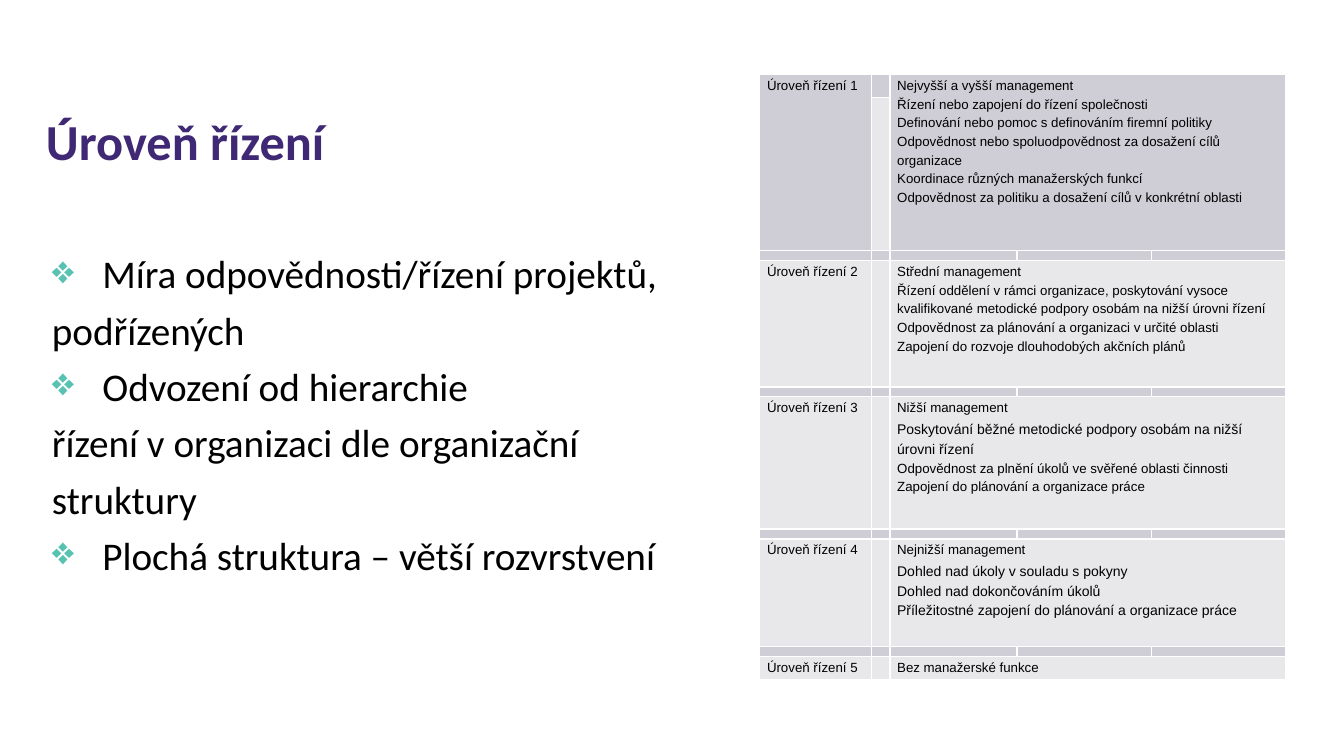
from dataclasses import dataclass

import pptx
import pptx.dml.color
import pptx.enum.text
import pptx.oxml.ns
import pptx.util
from lxml import etree
from pptx.util import Cm, Pt


@dataclass(frozen=True)
class Theme:
    heading_font: str = "Calibri"
    table_font: str = "Arial"
    title: str = "3F2874"
    text: str = "000000"
    bullet: str = "57C2B2"
    dark: str = "CFCDD6"
    light: str = "E8E8EB"
    border: str = "FFFFFF"
    title_size: float = 36
    body_size: float = 28
    cell_size: float = 9.5
    large_cell_size: float = 10
    empty_size: float = 1


@dataclass(frozen=True)
class Level:
    height: float
    lines: tuple
    large_lines: tuple = ()


THEME = Theme()
TITLE_BOX = (0.91, 0.84, 16, 4.65)
BODY_BOX = (0.91, 6.3, 32, 10.21)
TABLE_BOX = (19.15, 1.88, 13.26, 15.22)
COLUMNS = (2.82, 0.46, 3.2, 3.38, 3.4)
FIRST_ROW = 0.58
GAP_ROW = 0.25

BODY_LINES = (
    (True, "Míra odpovědnosti/řízení projektů,"),
    (False, "podřízených"),
    (True, "Odvození od hierarchie"),
    (False, "řízení v organizaci dle organizační"),
    (False, "struktury"),
    (True, "Plochá struktura – větší rozvrstvení"),
)

LEVELS = (
    Level(3.86, (
        "Nejvyšší a vyšší management",
        "Řízení nebo zapojení do řízení společnosti",
        "Definování nebo pomoc s definováním firemní politiky",
        "Odpovědnost nebo spoluodpovědnost za dosažení cílů organizace",
        "Koordinace různých manažerských funkcí",
        "Odpovědnost za politiku a dosažení cílů v konkrétní oblasti",
    )),
    Level(3.18, (
        "Střední management",
        "Řízení oddělení v rámci organizace, poskytování vysoce kvalifikované "
        "metodické podpory osobám na nižší úrovni řízení",
        "Odpovědnost za plánování a organizaci v určité oblasti",
        "Zapojení do rozvoje dlouhodobých akčních plánů",
    )),
    Level(3.33, (
        "Nižší management",
        "Poskytování běžné metodické podpory osobám na nižší úrovni řízení",
        "Odpovědnost za plnění úkolů ve svěřené oblasti činnosti",
        "Zapojení do plánování a organizace práce",
    ), (1,)),
    Level(2.72, (
        "Nejnižší management",
        "Dohled nad úkoly v souladu s pokyny",
        "Dohled nad dokončováním úkolů",
        "Příležitostné zapojení do plánování a organizace práce",
    ), (1, 2, 3)),
    Level(0.58, ("Bez manažerské funkce",)),
)


def add_element(parent, tag, **attributes):
    return etree.SubElement(parent, pptx.oxml.ns.qn(tag), attributes)


def style_para(para, font, size, color, bold=False):
    for span in para.runs:
        span.font.name = font
        span.font.size = Pt(size)
        span.font.bold = bold
        span.font.color.rgb = pptx.dml.color.RGBColor.from_string(color)


def add_text_frame(page, box):
    frame = page.shapes.add_textbox(*map(Cm, box)).text_frame
    frame.word_wrap = True
    return frame


def add_title(page, box):
    frame = add_text_frame(page, box)
    frame.vertical_anchor = pptx.enum.text.MSO_ANCHOR.MIDDLE
    frame.text = "Úroveň řízení"
    para = frame.paragraphs[0]
    para.line_spacing = 1.5
    style_para(para, THEME.heading_font, THEME.title_size, THEME.title, True)


def set_indent(para, bulleted):
    properties = para._p.get_or_add_pPr()
    properties.set("marL", str(Cm(1.42 if bulleted else 0.15)))
    properties.set("indent", str(Cm(-1.27 if bulleted else 0)))
    if bulleted:
        color = add_element(properties, "a:buClr")
        add_element(color, "a:srgbClr", val=THEME.bullet)
        add_element(properties, "a:buChar", char="❖")
    else:
        add_element(properties, "a:buNone")


def add_body(page, box):
    frame = add_text_frame(page, box)
    frame.text = "\n".join(text for _, text in BODY_LINES)
    for index, (bulleted, _) in enumerate(BODY_LINES):
        para = frame.paragraphs[index]
        set_indent(para, bulleted)
        para.line_spacing = 0.9
        if index:
            para.space_before = Pt(10)
        style_para(para, THEME.heading_font, THEME.body_size, THEME.text)


def style_cell(cell, fill):
    cell.margin_left = cell.margin_right = Cm(0.18)
    cell.margin_top = cell.margin_bottom = 0
    properties = cell._tc.get_or_add_tcPr()
    for side in ("a:lnL", "a:lnR", "a:lnT", "a:lnB"):
        line = add_element(properties, side, w=str(Pt(1)))
        add_element(add_element(line, "a:solidFill"), "a:srgbClr", val=THEME.border)
    cell.fill.solid()
    cell.fill.fore_color.rgb = pptx.dml.color.RGBColor.from_string(fill)
    add_element(cell.text_frame.paragraphs[0]._p, "a:endParaRPr",
                sz=str(int(THEME.empty_size * 100)))


def fill_cell(cell, lines, large_lines=()):
    cell.text_frame.text = "\n".join(lines)
    for index, para in enumerate(cell.text_frame.paragraphs):
        para.line_spacing = 1.25
        if large_lines and index == 0:
            para.space_after = Pt(2)
        size = THEME.large_cell_size if index in large_lines else THEME.cell_size
        style_para(para, THEME.table_font, size, THEME.text)


def add_levels_table(page, box):
    heights = [FIRST_ROW]
    for level in LEVELS:
        heights += [level.height, GAP_ROW]
    heights.pop()
    table = page.shapes.add_table(len(heights), len(COLUMNS), *map(Cm, box)).table
    table.first_row = table.horz_banding = False
    for column, width in zip(table.columns, COLUMNS):
        column.width = Cm(width)
    for index, height in enumerate(heights):
        table.rows[index].height = Cm(height)
        for column in range(len(COLUMNS)):
            top_block = index == 1 and column != 1
            dark = index % 2 == 0 or top_block
            style_cell(table.cell(index, column), THEME.dark if dark else THEME.light)
    for number, level in enumerate(LEVELS, 1):
        bottom = 2 * number - 1
        top = 0 if number == 1 else bottom
        label, content = table.cell(top, 0), table.cell(top, 2)
        if top != bottom:
            label.merge(table.cell(bottom, 0))
        content.merge(table.cell(bottom, len(COLUMNS) - 1))
        fill_cell(label, (f"Úroveň řízení {number}",))
        fill_cell(content, level.lines, level.large_lines)


def main():
    deck = pptx.Presentation()
    deck.slide_width, deck.slide_height = Cm(33.87), Cm(19.05)
    page = deck.slides.add_slide(deck.slide_layouts[6])
    add_title(page, TITLE_BOX)
    add_body(page, BODY_BOX)
    add_levels_table(page, TABLE_BOX)
    deck.save("out.pptx")


if __name__ == "__main__":
    main()
